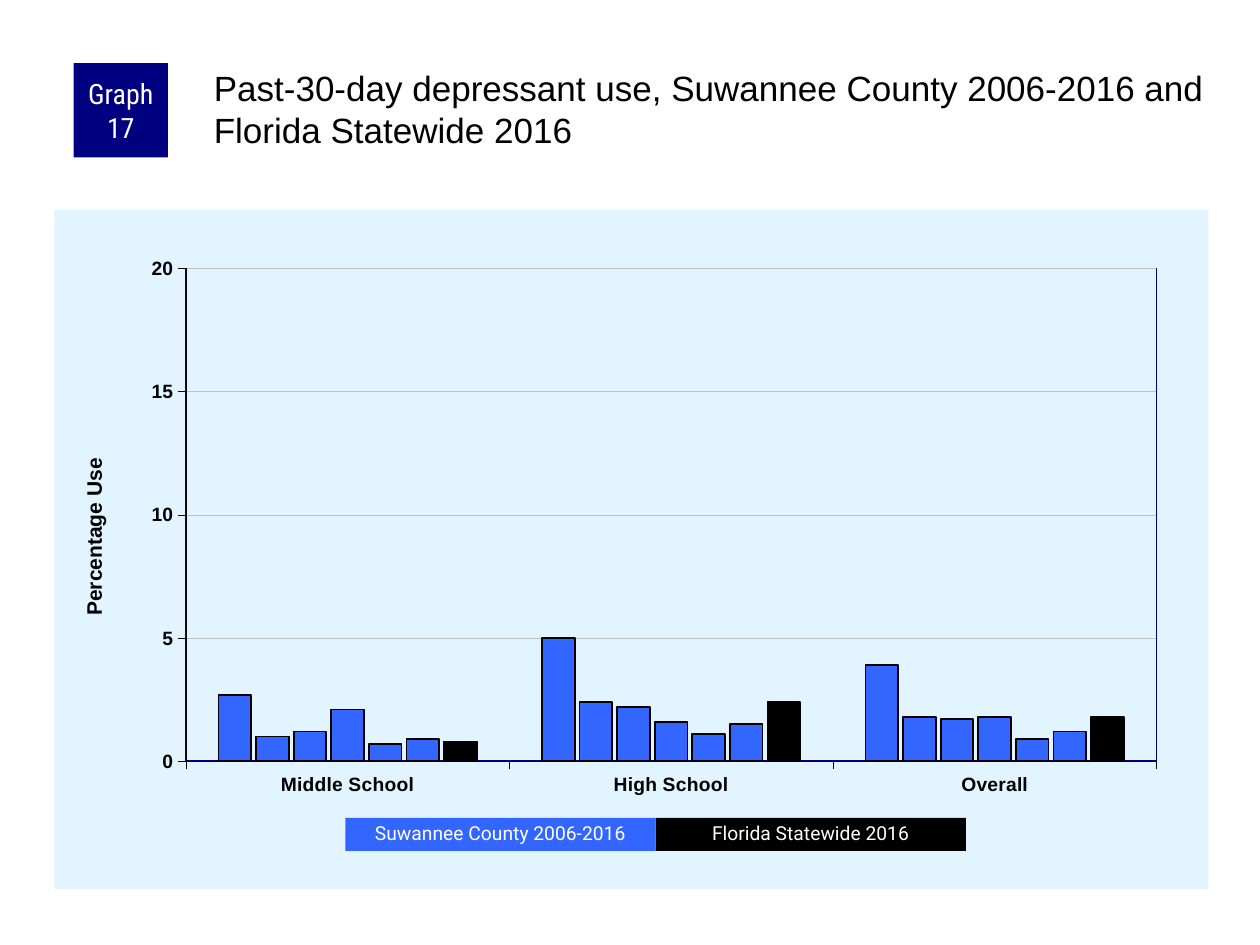
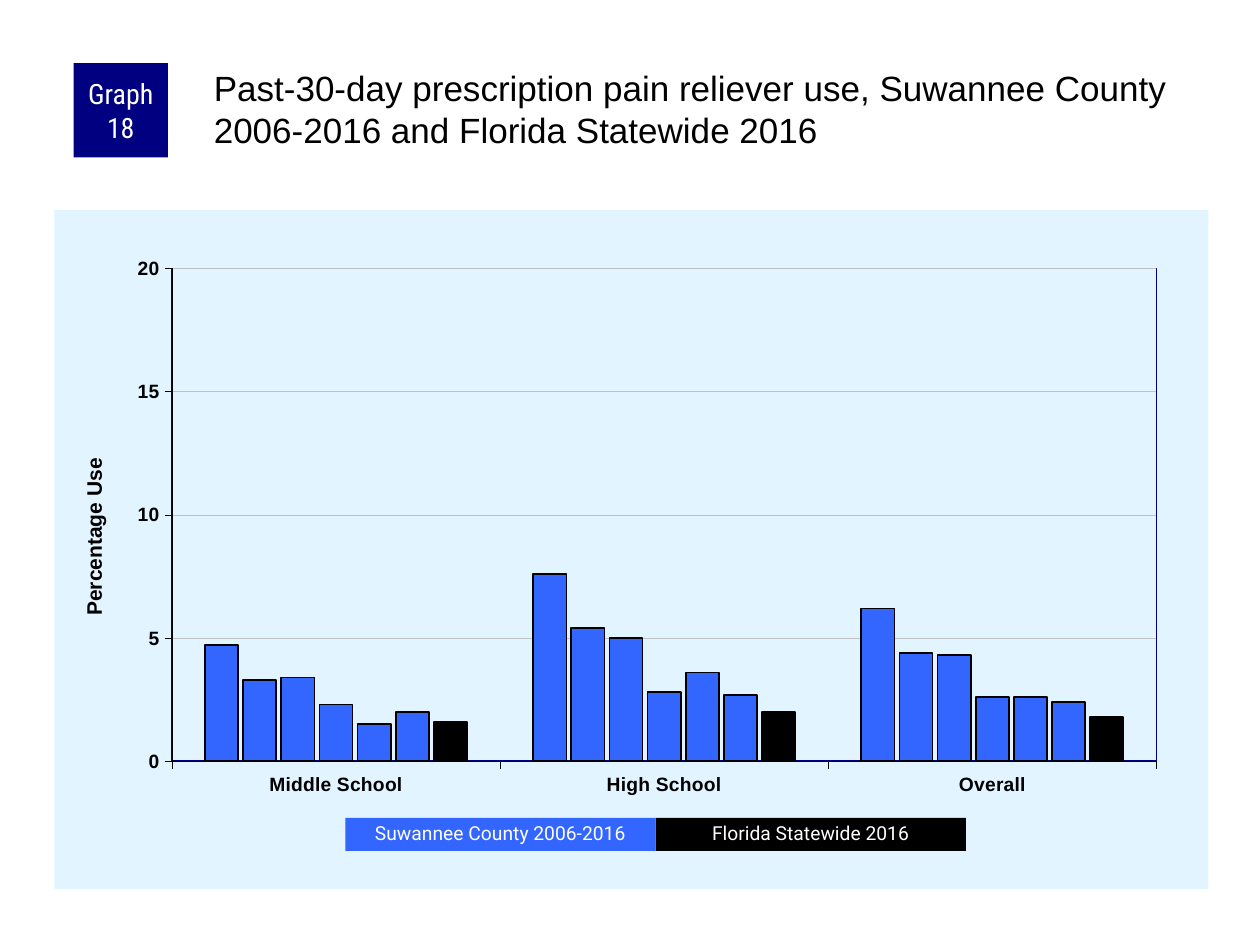
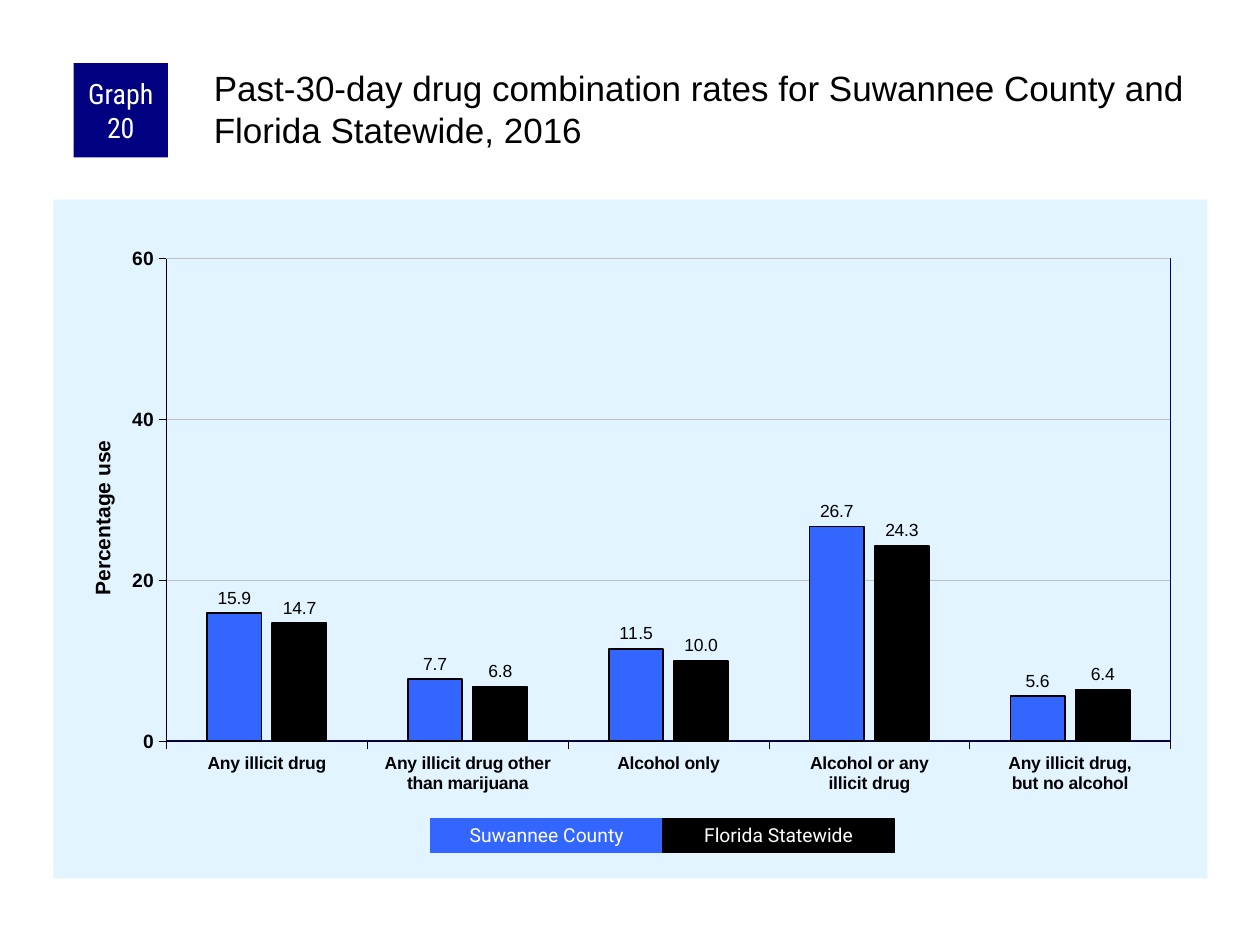
from dataclasses import dataclass
from lxml.etree import fromstring
from pptx import Presentation
from pptx.chart.data import CategoryChartData as Data
from pptx.dml.color import RGBColor as Color
from pptx.enum.chart import XL_CHART_TYPE as Kind, XL_TICK_MARK as Tick
from pptx.enum.shapes import MSO_SHAPE as Form
from pptx.enum.text import MSO_ANCHOR as Anchor, PP_ALIGN as Align
from pptx.util import Pt

C_NS = "http://schemas.openxmlformats.org/drawingml/2006/chart"
A_NS = "http://schemas.openxmlformats.org/drawingml/2006/main"


@dataclass(frozen=True)
class Theme:
    navy: str = "000080"
    blue: str = "3366FF"
    black: str = "000000"
    white: str = "FFFFFF"
    pale: str = "E1F4FF"
    grey: str = "C0C0C0"
    sans: str = "Arial"
    label: str = "Roboto"
    tight: str = "Roboto Condensed"
    title: int = 20
    badge: int = 16
    head: int = 12
    body: int = 11
    small: int = 10


THEME = Theme()


@dataclass
class Graph:
    number: int
    title: str
    head: str
    cats: tuple
    rows: tuple
    place: tuple
    plot: tuple
    mark: tuple
    top: int
    step: int
    gap: int
    lap: int
    size: int
    values: bool
    keys: tuple
    key: tuple
    edge: float


def style(font, size, color, face, bold=False):
    font.size, font.name, font.bold = Pt(size), face, bold
    font.color.rgb = Color.from_string(color)


def stroke(line, color, width):
    line.color.rgb = Color.from_string(color)
    line.width = Pt(width)


def write(frame, text, size, color, face, inset):
    frame.word_wrap = True
    (frame.margin_left, frame.margin_top,
     frame.margin_right, frame.margin_bottom) = map(Pt, inset)
    frame.text = text
    para = frame.paragraphs[0]
    style(para.runs[0].font, size, color, face)
    return para


def block(slide, place, fill, text, size, face, inset, edge=0):
    box = slide.shapes.add_shape(Form.RECTANGLE, *map(Pt, place))
    box.shadow.inherit = False
    box.fill.solid()
    box.fill.fore_color.rgb = Color.from_string(fill)
    if edge:
        stroke(box.line, fill, edge)
    else:
        box.line.fill.background()
    para = write(box.text_frame, text, size, THEME.white, face, inset)
    box.text_frame.vertical_anchor = Anchor.MIDDLE
    para.alignment = Align.CENTER
    return para


def header(slide, graph):
    block(slide, (42, 36, 54, 54), THEME.navy, f"Graph {graph.number}",
          THEME.badge, THEME.tight, (3.6, 0, 3.6, 0))
    box = slide.shapes.add_textbox(*map(Pt, (120, 36, 570, 60)))
    write(box.text_frame, graph.title, THEME.title, THEME.black,
          THEME.sans, (2.2, 2.2, 0, 0))


def legend(slide, graph):
    left, top, width, height = graph.key
    for i, (text, fill) in enumerate(zip(graph.keys, (THEME.blue, THEME.black))):
        para = block(slide, (left + i * width, top, width, height), fill, text,
                     THEME.body, THEME.label, (7.2, 3.6, 7.2, 3.6), graph.edge)
        para.line_spacing = 0.9


def layout(x, y, size=()):
    parts = '<c:layoutTarget val="inner"/>' if size else ""
    parts += '<c:xMode val="edge"/><c:yMode val="edge"/>'
    for tag, val in zip("xywh", (x, y, *size)):
        parts += f'<c:{tag} val="{val}"/>'
    return fromstring(f'<c:layout xmlns:c="{C_NS}"><c:manualLayout>{parts}'
                      '</c:manualLayout></c:layout>')


def paint(inner):
    return fromstring(f'<c:spPr xmlns:c="{C_NS}" xmlns:a="{A_NS}">{inner}</c:spPr>')


def solid(color):
    return f'<a:solidFill><a:srgbClr val="{color}"/></a:solidFill>'


def drop(node):
    for old in node.findall(f"{{{C_NS}}}layout"):
        node.remove(old)


def arrange(chart, graph):
    space = chart._chartSpace
    space.chart.addnext(paint(solid(THEME.pale) + "<a:ln><a:noFill/></a:ln>"))
    area = space.chart.plotArea
    drop(area)
    x, y, *size = graph.plot
    area.insert(0, layout(x, y, size))
    area.append(paint(f'<a:noFill/><a:ln w="{Pt(1)}">{solid(THEME.navy)}</a:ln>'))
    title = chart.value_axis.axis_title._element
    drop(title)
    title.find(f"{{{C_NS}}}tx").addnext(layout(*graph.mark))


def axes(chart, graph):
    cat, val = chart.category_axis, chart.value_axis
    for axis, size in ((cat, graph.size), (val, THEME.body)):
        axis.major_tick_mark, axis.minor_tick_mark = Tick.OUTSIDE, Tick.NONE
        style(axis.tick_labels.font, size, THEME.black, THEME.sans, True)
        stroke(axis.format.line, THEME.black, 0.25)
    val.minimum_scale, val.maximum_scale = 0, graph.top
    val.major_unit = graph.step
    stroke(val.major_gridlines.format.line, THEME.grey, 0.25)
    frame = val.axis_title.text_frame
    frame.text = graph.head
    style(frame.paragraphs[0].runs[0].font, THEME.head, THEME.black,
          THEME.sans, True)


def bars(slide, graph):
    data = Data()
    data.categories = graph.cats
    for i, row in enumerate(graph.rows, 1):
        data.add_series(f"Series {i}", row)
    chart = slide.shapes.add_chart(Kind.COLUMN_CLUSTERED,
                                   *map(Pt, graph.place), data).chart
    chart.has_title = chart.has_legend = False
    style(chart.font, THEME.small, THEME.black, THEME.sans)
    plot = chart.plots[0]
    plot.gap_width, plot.overlap = graph.gap, graph.lap
    plot.vary_by_categories = False
    last = len(graph.rows) - 1
    for i, row in enumerate(plot.series):
        row.format.fill.solid()
        tint = THEME.black if i == last else THEME.blue
        row.format.fill.fore_color.rgb = Color.from_string(tint)
        stroke(row.format.line, THEME.black, 1)
        if graph.values:
            tags = row.data_labels
            tags.show_value = True
            tags.number_format, tags.number_format_is_linked = "0.0", False
            style(tags.font, THEME.small, THEME.black, THEME.sans)
    axes(chart, graph)
    arrange(chart, graph)


def trend(number, title, rows, plot):
    return Graph(
        number, title, "Percentage Use",
        ("Middle School", "High School", "Overall"), rows,
        (31, 120, 659.5, 388), plot, (0.02, 0.36), 20, 5, 200, -15,
        THEME.body, False,
        ("Suwannee County 2006-2016", "Florida Statewide 2016"),
        (197.3, 467.3, 177.3, 18.9), 0)


GRAPHS = (
    trend(17, "Past-30-day depressant use, Suwannee County 2006-2016 "
          "and Florida Statewide 2016",
          ((2.7, 5, 3.9), (1, 2.4, 1.8), (1.2, 2.2, 1.7), (2.1, 1.6, 1.8),
           (0.7, 1.1, 0.9), (0.9, 1.5, 1.2), (0.8, 2.4, 1.8)),
          (0.114, 0.086, 0.841, 0.726)),
    trend(18, "Past-30-day prescription pain reliever use, Suwannee County "
          "2006-2016 and Florida Statewide 2016",
          ((4.7, 7.6, 6.2), (3.3, 5.4, 4.4), (3.4, 5, 4.3), (2.3, 2.8, 2.6),
           (1.5, 3.6, 2.6), (2, 2.7, 2.4), (1.6, 2, 1.8)),
          (0.102, 0.086, 0.853, 0.726)),
    Graph(20, "Past-30-day drug combination rates for Suwannee County "
          "and Florida Statewide, 2016", "Percentage use",
          ("Any illicit drug", "Any illicit drug other than marijuana",
           "Alcohol only", "Alcohol or any\nillicit drug",
           "Any illicit drug,\nbut no alcohol"),
          ((15.9, 7.7, 11.5, 26.7, 5.6), (14.7, 6.8, 10, 24.3, 6.4)),
          (30.5, 114, 659.5, 388), (0.098, 0.087, 0.87, 0.711),
          (0.028, 0.349), 60, 20, 150, -20, THEME.small, True,
          ("Suwannee County", "Florida Statewide"),
          (246.2, 468, 132.5, 19.4), 0.75),
)


def main():
    deck = Presentation()
    deck.slide_width, deck.slide_height = Pt(720), Pt(540)
    for graph in GRAPHS:
        slide = deck.slides.add_slide(deck.slide_layouts[6])
        bars(slide, graph)
        header(slide, graph)
        legend(slide, graph)
    deck.save("out.pptx")


if __name__ == "__main__":
    main()
